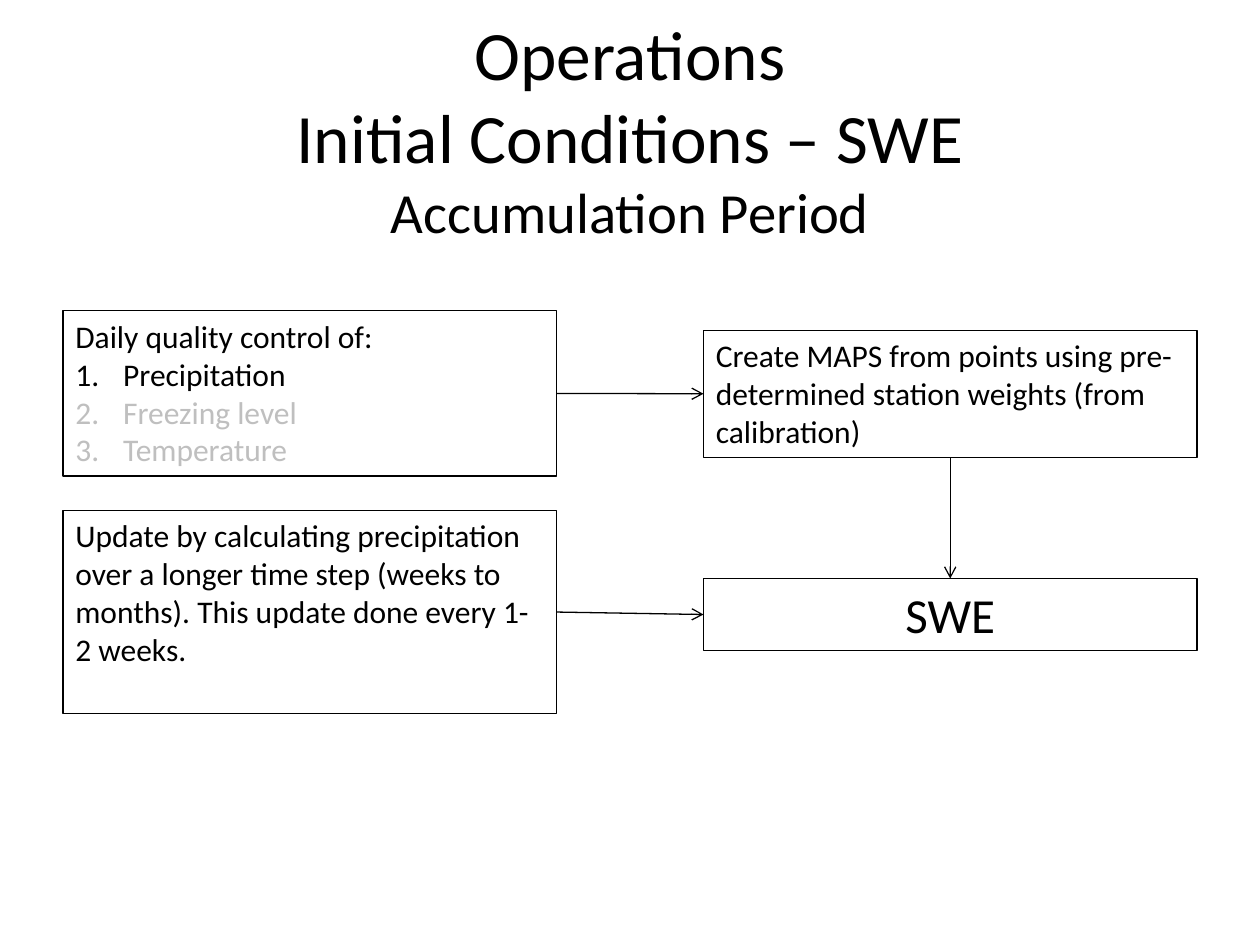
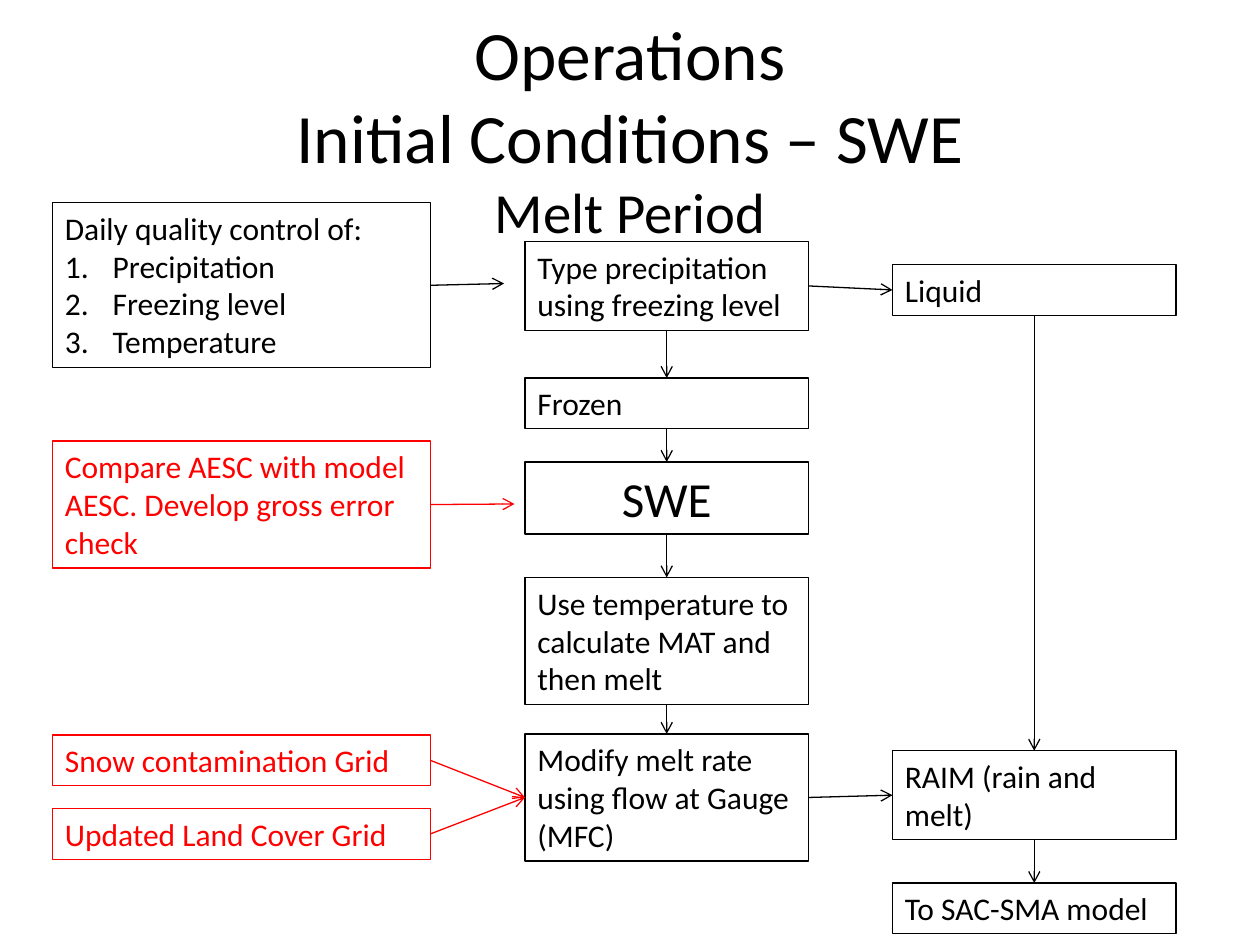
from dataclasses import dataclass

from lxml import etree
from pptx import Presentation
from pptx import util as u
from pptx.dml.color import RGBColor
from pptx.enum import shapes, text
from pptx.oxml import ns

TOP, LEFT, BOTTOM, RIGHT = range(4)


@dataclass(frozen=True)
class Theme:
    """Colours, type sizes and line measures shared by the slides."""

    font: str = "Calibri"
    ink: str = "000000"
    muted: str = "BFBFBF"
    alert: str = "FF0000"
    title: float = 39.6
    subtitle: float = 32.4
    body: float = 18
    result: float = 28
    rule: float = 0.75
    rows_per_point: float = 0.202
    padding_rows: float = 1.2
    list_indent: float = 0.38


def write(para, words, *, font, size, color):
    """Add formatted words to a paragraph."""
    span = para.add_run()
    span.text = words
    span.font.name = font
    span.font.size = u.Pt(size)
    span.font.color.rgb = RGBColor.from_string(color)


class FlowDeck:
    """Draws flow charts on a grid of 120 columns by 90 rows."""

    columns, rows = 120, 90

    def __init__(self, theme):
        """Open an empty deck with the given theme."""
        self.theme = theme
        self.deck = Presentation()
        self.deck.slide_width, self.deck.slide_height = u.Inches(10), u.Inches(7.5)
        self.page = None

    def x(self, column):
        """Turn columns into a length."""
        return round(self.deck.slide_width * column / self.columns)

    def y(self, row):
        """Turn rows into a length."""
        return round(self.deck.slide_height * row / self.rows)

    def add_page(self, period):
        """Start a slide titled for one period."""
        theme = self.theme
        self.page = self.deck.slides.add_slide(self.deck.slide_layouts[6])
        box = self.page.shapes.add_textbox(self.x(6), self.y(2), self.x(108), self.y(20.4))
        frame = box.text_frame
        frame.word_wrap = True
        frame.vertical_anchor = text.MSO_ANCHOR.MIDDLE
        para = frame.paragraphs[0]
        para.alignment = text.PP_ALIGN.CENTER
        for heading in ("Operations", "Initial Conditions – SWE"):
            write(para, heading, font=theme.font, size=theme.title, color=theme.ink)
            para.add_line_break()
        write(para, period, font=theme.font, size=theme.subtitle, color=theme.ink)

    def add_box(self, column, row, width, words, lines=1, color=None, size=None, centered=False):
        """Add an outlined step as tall as its number of text lines."""
        theme = self.theme
        color, size = color or theme.ink, size or theme.body
        height = lines * size * theme.rows_per_point + theme.padding_rows
        box = self.page.shapes.add_shape(
            shapes.MSO_SHAPE.RECTANGLE, self.x(column), self.y(row), self.x(width), self.y(height))
        box.shadow.inherit = False
        box.fill.background()
        box.line.color.rgb = RGBColor.from_string(color)
        box.line.width = u.Pt(theme.rule)
        frame = box.text_frame
        frame.word_wrap = True
        frame.vertical_anchor = text.MSO_ANCHOR.TOP
        para = frame.paragraphs[0]
        para.alignment = text.PP_ALIGN.CENTER if centered else text.PP_ALIGN.LEFT
        write(para, words, font=theme.font, size=size, color=color)
        return box

    def add_result(self, column, row, width):
        """Add the snow water equivalent step."""
        return self.add_box(column, row, width, "SWE", size=self.theme.result, centered=True)

    def add_checklist(self, column, row, width, other_color):
        """Add the quality control step with its numbered inputs."""
        theme = self.theme
        box = self.add_box(column, row, width, "Daily quality control of:", lines=4)
        inputs = {"Precipitation": theme.ink, "Freezing level": other_color, "Temperature": other_color}
        for name, color in inputs.items():
            para = box.text_frame.add_paragraph()
            para.alignment = text.PP_ALIGN.LEFT
            properties = para._p.get_or_add_pPr()
            indent = u.Inches(theme.list_indent)
            properties.set("marL", str(indent))
            properties.set("indent", str(-indent))
            etree.SubElement(properties, ns.qn("a:buAutoNum"), type="arabicPeriod")
            write(para, name, font=theme.font, size=theme.body, color=color)
        return box

    def add_arrow(self, source, target, start=RIGHT, end=LEFT, color=None):
        """Join a step to another step or to a (column, row) point."""
        free = isinstance(target, tuple)
        tip = (self.x(target[0]), self.y(target[1])) if free else (target.left, target.top)
        arrow = self.page.shapes.add_connector(
            shapes.MSO_CONNECTOR.STRAIGHT, source.left, source.top, *tip)
        arrow.begin_connect(source, start)
        if not free:
            arrow.end_connect(target, end)
        arrow.line.color.rgb = RGBColor.from_string(color or self.theme.ink)
        arrow.line.width = u.Pt(self.theme.rule)
        etree.SubElement(arrow.line._get_or_add_ln(), ns.qn("a:tailEnd"), type="arrow")
        etree.SubElement(arrow._element.spPr, ns.qn("a:effectLst"))

    def add_chain(self, *steps):
        """Join steps downwards in turn."""
        for upper, lower in zip(steps, steps[1:]):
            self.add_arrow(upper, lower, BOTTOM, TOP)


def draw_accumulation(flow):
    """Draw the accumulation period."""
    flow.add_page("Accumulation Period")
    left, right, width = 6, 67, 47
    control = flow.add_checklist(left, 29.6, width, flow.theme.muted)
    update = flow.add_box(
        left, 48.6, width,
        "Update by calculating precipitation over a longer time step (weeks to months). "
        "This update done every 1-2 weeks.", lines=5)
    maps = flow.add_box(
        right, 31.45, width,
        "Create MAPS from points using pre-determined station weights (from calibration)", lines=3)
    swe = flow.add_result(right, 55.1, width)
    flow.add_arrow(control, maps)
    flow.add_chain(maps, swe)
    flow.add_arrow(update, swe)


def draw_melt(flow):
    """Draw the melt period."""
    flow.add_page("Melt Period")
    alert = flow.theme.alert
    left, middle, right = 5, 50, 85
    wide, narrow = 36, 27
    control = flow.add_checklist(left, 19.3, wide, flow.theme.ink)
    typing = flow.add_box(middle, 23, narrow, "Type precipitation using freezing level", lines=2)
    swe = flow.add_result(middle, 44, narrow)
    liquid = flow.add_box(right, 25.2, narrow, "Liquid")
    frozen = flow.add_box(middle, 36, narrow, "Frozen")
    melt = flow.add_box(middle, 55, narrow, "Use temperature to calculate MAT and then melt", lines=3)
    compare = flow.add_box(
        left, 42, wide, "Compare AESC with model AESC. Develop gross error check", lines=3, color=alert)
    cover = flow.add_box(left, 77, wide, "Updated Land Cover Grid", color=alert)
    snow = flow.add_box(left, 70, wide, "Snow contamination Grid", color=alert)
    modify = flow.add_box(middle, 69.9, narrow, "Modify melt rate using flow at Gauge (MFC)", lines=3)
    raim = flow.add_box(right, 71.5, narrow, "RAIM (rain and melt)", lines=2)
    model = flow.add_box(right, 84.1, narrow, "To SAC-SMA model")
    flow.add_arrow(control, (48, 27))
    flow.add_arrow(typing, liquid)
    flow.add_chain(typing, frozen, swe, melt, modify)
    flow.add_arrow(compare, (49, 48), color=alert)
    for grid in (snow, cover):
        flow.add_arrow(grid, modify, color=alert)
    flow.add_arrow(modify, raim)
    flow.add_chain(liquid, raim, model)


def main():
    """Build and save the deck."""
    flow = FlowDeck(Theme())
    draw_accumulation(flow)
    draw_melt(flow)
    flow.deck.save("out.pptx")


if __name__ == "__main__":
    main()
